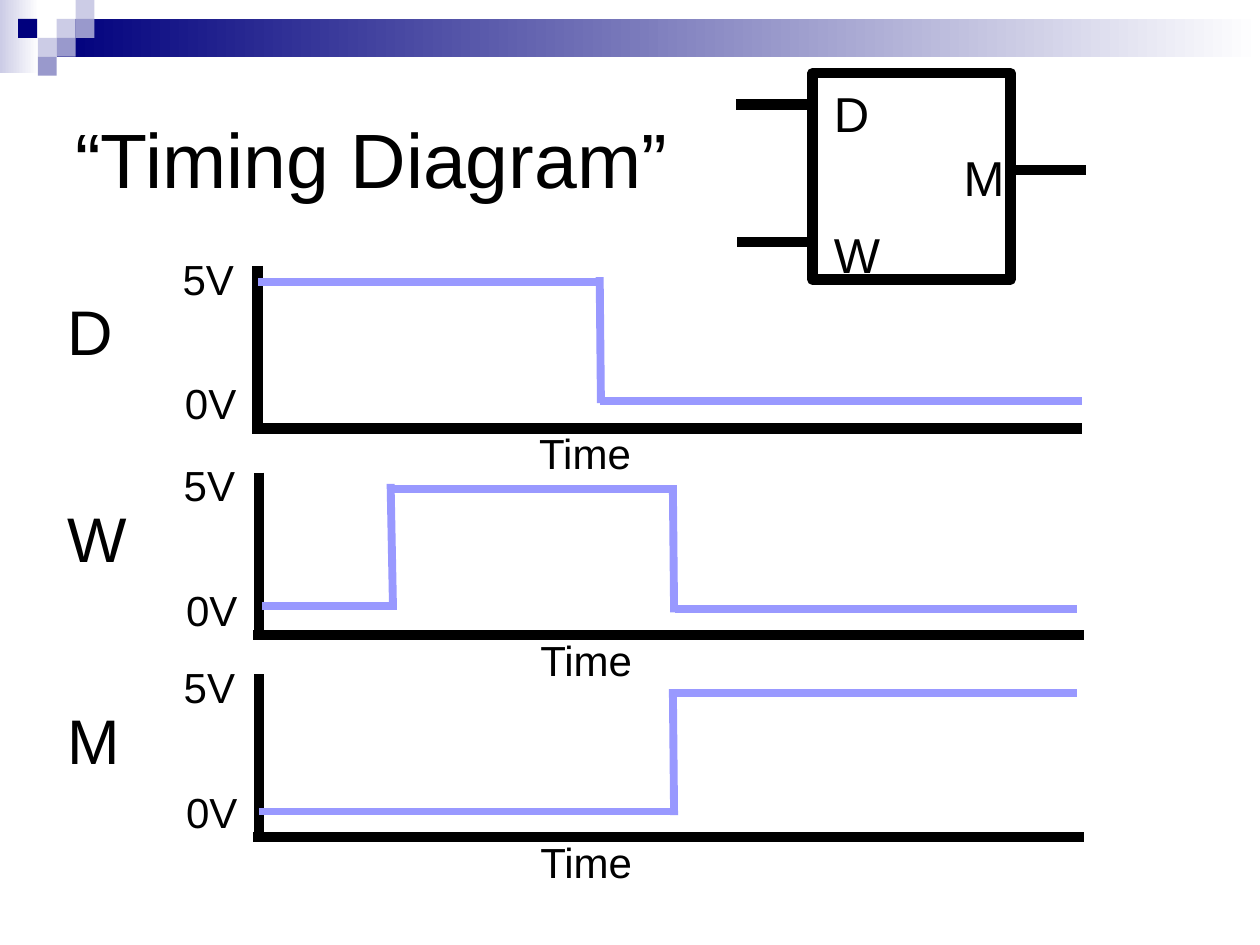
"""Build a timing diagram slide for a one-bit memory with inputs D and W and output M."""
from dataclasses import dataclass

import pptx
import pptx.dml.color
import pptx.enum.shapes
import pptx.enum.text
import pptx.oxml
import pptx.util

Pt = pptx.util.Pt
COLORS = {
    "ink": "000000",
    "trace": "9999FF",
    "navy": "00007D",
    "lavender": "CCCCE6",
    "violet": "9999CC",
    "paper": "FFFFFF",
}
AXIS_WIDTH = 6
TRACE_WIDTH = 4.5


@dataclass(frozen=True)
class Segment:
    x1: float
    y1: float
    x2: float
    y2: float


@dataclass(frozen=True)
class Plot:
    signal: str
    signal_width: float
    left: float
    top: float
    trace: tuple[Segment, ...]


@dataclass(frozen=True)
class Tile:
    left: float
    top: float
    color: str


@dataclass(frozen=True)
class Pin:
    signal: str
    label_left: float
    label_top: float
    label_width: float
    wire: Segment


PLOTS = (
    Plot("D", 40.3, 144, 151.9, (
        Segment(147.6, 161.3, 343.4, 161.3),
        Segment(342.7, 158.4, 343.4, 230.4),
        Segment(342.7, 229, 618.5, 229),
    )),
    Plot("W", 54, 144.7, 270, (
        Segment(149.8, 346.3, 223.9, 346.3),
        Segment(223.2, 276.5, 224.6, 348.5),
        Segment(222.5, 279.4, 386.6, 279.4),
        Segment(384.5, 277.9, 385.2, 349.9),
        Segment(385.9, 347.8, 615.6, 347.8),
    )),
    Plot("M", 44.6, 144.7, 385.4, (
        Segment(148.3, 463.7, 386.6, 463.7),
        Segment(384.5, 393.8, 385.2, 465.8),
        Segment(385.9, 396, 615.6, 396),
    )),
)
TILES = (
    Tile(32.4, 10.8, "lavender"),
    Tile(43.2, 0, "lavender"),
    Tile(43.2, 10.8, "violet"),
    Tile(21.6, 21.6, "lavender"),
    Tile(10.4, 10.8, "navy"),
    Tile(32.4, 21.6, "violet"),
    Tile(21.6, 32.4, "violet"),
)
PINS = (
    Pin("D", 469.4, 43.9, 34.6, Segment(420.5, 59.8, 462.2, 59.8)),
    Pin("W", 469.4, 124.6, 41, Segment(421.2, 138.2, 463, 138.2)),
    Pin("M", 543.6, 80.6, 38.2, Segment(578.9, 97.2, 620.6, 97.2)),
)


def rgb(color: str) -> pptx.dml.color.RGBColor:
    """Look up a named colour."""
    return pptx.dml.color.RGBColor.from_string(COLORS[color])


def add_rectangle(slide, left: float, top: float, width: float, height: float):
    """Add a rectangle without shadow."""
    rectangle = slide.shapes.add_shape(
        pptx.enum.shapes.MSO_SHAPE.RECTANGLE, Pt(left), Pt(top), Pt(width), Pt(height))
    rectangle.shadow.inherit = False
    return rectangle


def add_fade(slide, left: float, top: float, width: float, height: float, color: str) -> None:
    """Add a band that fades from a colour to the paper."""
    band = add_rectangle(slide, left, top, width, height)
    band.line.fill.background()
    band.fill.gradient()
    band.fill.gradient_angle = 0
    for stop, name, position in zip(band.fill.gradient_stops, (color, "paper"), (0, 1)):
        stop.color.rgb = rgb(name)
        stop.position = position


def add_tile(slide, tile: Tile) -> None:
    """Add one square of the corner ornament."""
    square = add_rectangle(slide, tile.left, tile.top, 10.8, 10.8)
    square.fill.solid()
    square.fill.fore_color.rgb = rgb(tile.color)
    square.line.fill.background()


def add_line(slide, segment: Segment, color: str, width: float) -> None:
    """Add a straight line."""
    line = slide.shapes.add_connector(
        pptx.enum.shapes.MSO_CONNECTOR.STRAIGHT,
        Pt(segment.x1), Pt(segment.y1), Pt(segment.x2), Pt(segment.y2))
    line.line.color.rgb = rgb(color)
    line.line.width = Pt(width)
    line._element.spPr.append(pptx.oxml.parse_xml(
        '<a:effectLst xmlns:a="http://schemas.openxmlformats.org/drawingml/2006/main"/>'))


def add_text(slide, text: str, *, left: float, top: float, width: float, height: float,
             size: float, middle: bool = False, wrap: bool = False) -> None:
    """Add a text box."""
    box = slide.shapes.add_textbox(Pt(left), Pt(top), Pt(width), Pt(height))
    frame = box.text_frame
    frame.word_wrap = wrap
    if middle:
        frame.vertical_anchor = pptx.enum.text.MSO_ANCHOR.MIDDLE
    run = frame.paragraphs[0].add_run()
    run.text = text
    run.font.size = Pt(size)
    run.font.name = "Arial"
    run.font.color.rgb = rgb("ink")


def add_plot(slide, plot: Plot) -> None:
    """Add the axes, labels and trace of one signal."""
    left, top = plot.left, plot.top
    add_line(slide, Segment(left, top + 93, left + 474.5, top + 93), "ink", AXIS_WIDTH)
    add_line(slide, Segment(left + 3.3, top, left + 3.3, top + 95.8), "ink", AXIS_WIDTH)
    for segment in plot.trace:
        add_line(slide, segment, "trace", TRACE_WIDTH)
    for text, dx, dy, width in (("5V", -46.8, -10.8, 43.9), ("0V", -45.4, 60.3, 43.9),
                                ("Time", 157, 89, 67.7)):
        add_text(slide, text, left=left + dx, top=top + dy, width=width, height=36, size=24)
    add_text(slide, plot.signal, left=31.7, top=top + 12, width=plot.signal_width,
             height=50.4, size=36)


def add_memory_cell(slide) -> None:
    """Add the block symbol with its pins."""
    cell = add_rectangle(slide, 464.4, 41.8, 113, 118.1)
    cell.fill.background()
    cell.line.color.rgb = rgb("ink")
    cell.line.width = Pt(AXIS_WIDTH)
    for pin in PINS:
        add_line(slide, pin.wire, "ink", AXIS_WIDTH)
        add_text(slide, pin.signal, left=pin.label_left, top=pin.label_top,
                 width=pin.label_width, height=41, size=28)


def main() -> None:
    """Build and save the slide."""
    deck = pptx.Presentation()
    deck.slide_width, deck.slide_height = Pt(720), Pt(540)
    slide = deck.slides.add_slide(deck.slide_layouts[6])
    add_fade(slide, 0, 0, 22.3, 41.8, "lavender")
    add_fade(slide, 32.4, 10.8, 687.6, 21.6, "navy")
    for tile in TILES:
        add_tile(slide, tile)
    add_text(slide, "“Timing Diagram”", left=36, top=36, width=648, height=108,
             size=44, middle=True, wrap=True)
    for plot in PLOTS:
        add_plot(slide, plot)
    add_memory_cell(slide)
    deck.save("out.pptx")


if __name__ == "__main__":
    main()
